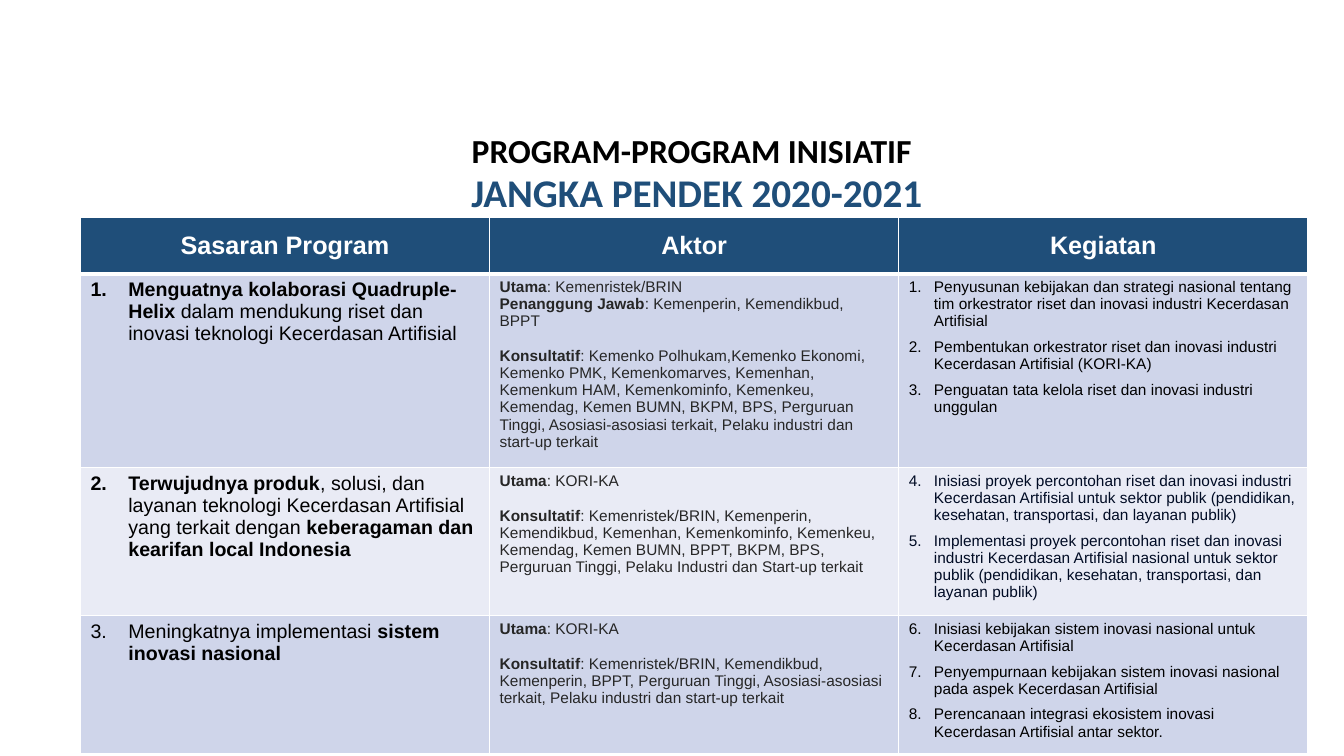
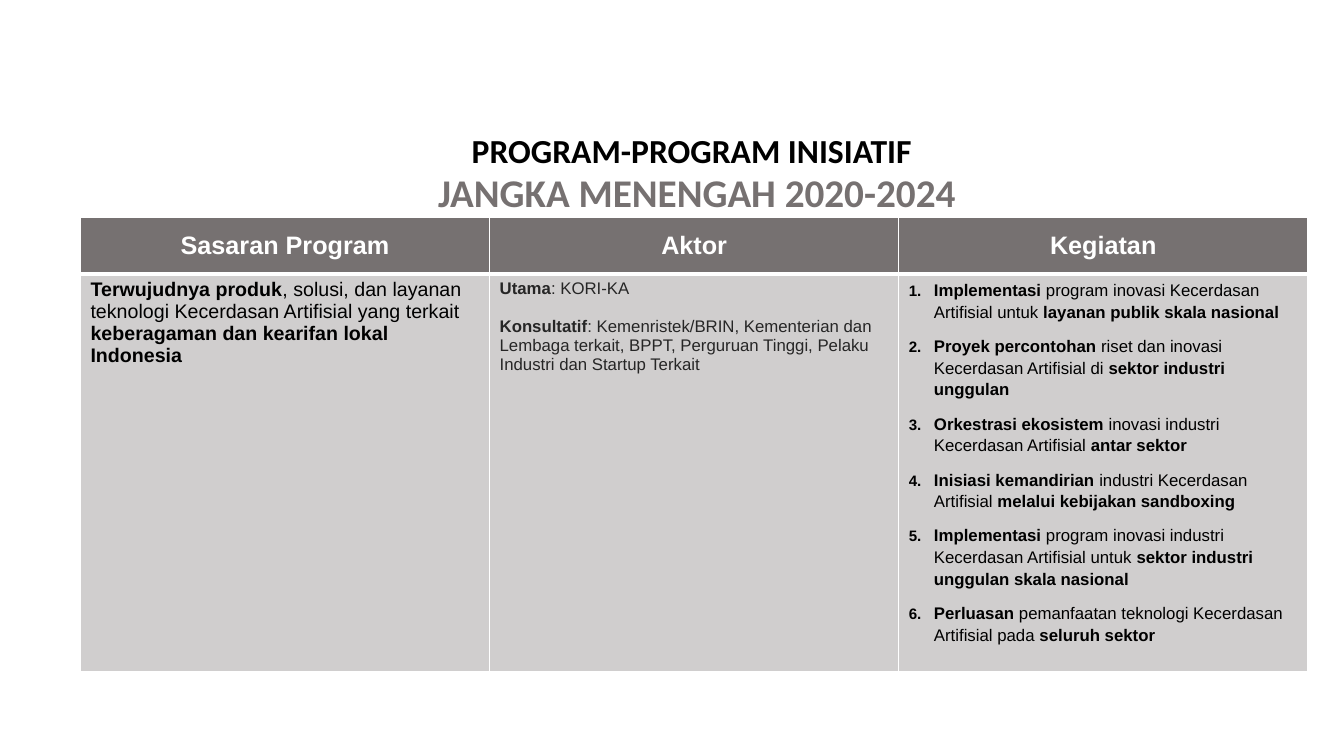
from lxml import etree
from pptx import Presentation
from pptx.dml.color import RGBColor
from pptx.enum.text import MSO_ANCHOR, PP_ALIGN
from pptx.oxml.ns import qn
from pptx.util import Pt

CENTER = PP_ALIGN.CENTER
MIDDLE = MSO_ANCHOR.MIDDLE
COLORS = {
    "black": "000000", "white": "FFFFFF", "charcoal": "262626",
    "navy": "1F4E79", "midnight": "000B24", "gray": "767171",
    "pale_blue": "CFD5EA", "ice": "E9EBF5", "pale_gray": "D0CECE",
}
TABLE_LEFT, TABLE_TOP = 57.5, 155.5
COLUMN_WIDTH, HEADER_HEIGHT = 292.25, 40
HEADINGS = ["Sasaran Program", "Aktor", "Kegiatan"]

HEADER = {"size": 18, "color": "white", "para": {"alignment": CENTER}}
GOAL = {"size": 14, "color": "black"}
NUMBERED_GOAL = {**GOAL, "indent": 27}
ACTOR = {"size": 11, "color": "charcoal", "gap": 12.4}
LARGE_ACTOR = {**ACTOR, "size": 12, "gap": 14}
ACTIVITY = {"size": 11, "color": "black", "indent": 18,
            "para": {"space_after": Pt(6)}}
DARK_ACTIVITY = {**ACTIVITY, "color": "midnight"}
LARGE_ACTIVITY = {**ACTIVITY, "size": 12, "bullet_size": 90,
                  "para": {"space_after": Pt(9), "line_spacing": 1.15}}

SHORT_TERM = [
    {"fill": "pale_blue", "height": 129, "cells": [
        (NUMBERED_GOAL, 1, [
            "**Menguatnya kolaborasi Quadruple-Helix **dalam mendukung riset dan "
            "inovasi teknologi Kecerdasan Artifisial"]),
        (ACTOR, 1, [
            "**Utama**: Kemenristek/BRIN",
            "**Penanggung Jawab**: Kemenperin, Kemendikbud, BPPT",
            "**Konsultatif**: Kemenko Polhukam,Kemenko Ekonomi, Kemenko PMK, "
            "Kemenkomarves, Kemenhan, Kemenkum HAM, Kemenkominfo, Kemenkeu, "
            "Kemendag, Kemen BUMN, BKPM, BPS, Perguruan Tinggi, Asosiasi-asosiasi "
            "terkait, Pelaku industri dan start-up terkait"]),
        (ACTIVITY, 1, [
            "Penyusunan kebijakan dan strategi nasional tentang tim orkestrator "
            "riset dan inovasi industri Kecerdasan Artifisial",
            "Pembentukan orkestrator riset dan inovasi industri Kecerdasan "
            "Artifisial (KORI-KA)",
            "Penguatan tata kelola riset dan inovasi industri unggulan"]),
    ]},
    {"fill": "ice", "height": 100, "cells": [
        (NUMBERED_GOAL, 2, [
            "**Terwujudnya produk**, solusi, dan layanan teknologi Kecerdasan "
            "Artifisial yang terkait dengan **keberagaman dan kearifan local "
            "Indonesia**"]),
        (ACTOR, 1, [
            "**Utama**: KORI-KA",
            "**Konsultatif**: Kemenristek/BRIN, Kemenperin, Kemendikbud, Kemenhan, "
            "Kemenkominfo, Kemenkeu, Kemendag, Kemen BUMN, BPPT, BKPM, BPS, "
            "Perguruan Tinggi, Pelaku Industri dan Start-up terkait"]),
        (DARK_ACTIVITY, 4, [
            "Inisiasi proyek percontohan riset dan inovasi industri Kecerdasan "
            "Artifisial untuk sektor publik (pendidikan, kesehatan, transportasi, "
            "dan layanan publik)",
            "Implementasi proyek percontohan riset dan inovasi industri Kecerdasan "
            "Artifisial nasional untuk sektor publik (pendidikan, kesehatan, "
            "transportasi, dan layanan publik)"]),
    ]},
    {"fill": "pale_blue", "height": 91, "cells": [
        (NUMBERED_GOAL, 3, [
            "Meningkatnya implementasi **sistem inovasi nasional**"]),
        (ACTOR, 1, [
            "**Utama**: KORI-KA",
            "**Konsultatif**: Kemenristek/BRIN, Kemendikbud, Kemenperin, BPPT, "
            "Perguruan Tinggi, Asosiasi-asosiasi terkait, Pelaku industri dan "
            "start-up terkait"]),
        (ACTIVITY, 6, [
            "Inisiasi kebijakan sistem inovasi nasional untuk Kecerdasan Artifisial",
            "Penyempurnaan kebijakan sistem inovasi nasional pada aspek Kecerdasan "
            "Artifisial",
            "Perencanaan integrasi ekosistem inovasi Kecerdasan Artifisial antar "
            "sektor."]),
    ]},
]

MEDIUM_TERM = [
    {"fill": "pale_gray", "height": 268.5, "cells": [
        (GOAL, 1, [
            "**Terwujudnya produk**, solusi, dan layanan teknologi Kecerdasan "
            "Artifisial yang terkait **keberagaman dan kearifan lokal Indonesia**"]),
        (LARGE_ACTOR, 1, [
            "**Utama**: KORI-KA",
            "**Konsultatif**: Kemenristek/BRIN, Kementerian dan Lembaga terkait, "
            "BPPT, Perguruan Tinggi, Pelaku Industri dan Startup Terkait"]),
        (LARGE_ACTIVITY, 1, [
            "**Implementasi** program inovasi Kecerdasan Artifisial untuk **layanan "
            "publik skala nasional**",
            "**Proyek percontohan **riset dan inovasi Kecerdasan Artifisial di "
            "**sektor industri unggulan**",
            "**Orkestrasi ekosistem **inovasi industri Kecerdasan Artifisial "
            "**antar sektor**",
            "**Inisiasi kemandirian **industri Kecerdasan Artifisial **melalui "
            "kebijakan sandboxing**",
            "**Implementasi** program inovasi industri Kecerdasan Artifisial untuk "
            "**sektor industri unggulan skala nasional**",
            "**Perluasan **pemanfaatan teknologi Kecerdasan Artifisial pada "
            "**seluruh sektor**"]),
    ]},
]


def rgb(color):
    return RGBColor.from_string(COLORS[color])


def set_values(target, values):
    for name, value in values.items():
        setattr(target, name, value)


def add_span(para, text, size, color, bold=True, font="Arial"):
    span = para.add_run()
    span.text = text
    set_values(span.font, {"name": font, "size": Pt(size), "bold": bold})
    span.font.color.rgb = rgb(color)


def add_number(para, style, start):
    properties = para._p.get_or_add_pPr()
    properties.set("marL", str(Pt(style["indent"])))
    properties.set("indent", str(-Pt(style["indent"])))
    bullet_color = etree.SubElement(properties, qn("a:buClr"))
    etree.SubElement(bullet_color, qn("a:srgbClr"), val=COLORS[style["color"]])
    if "bullet_size" in style:
        etree.SubElement(properties, qn("a:buSzPct"),
                         val=str(style["bullet_size"] * 1000))
    etree.SubElement(properties, qn("a:buFont"), typeface="Arial")
    etree.SubElement(properties, qn("a:buAutoNum"), type="arabicPeriod",
                     startAt=str(start))


def fill_cell(cell, style, start, texts):
    frame = cell.text_frame
    for index, text in enumerate(texts):
        para = frame.add_paragraph() if index else frame.paragraphs[0]
        if "indent" in style:
            add_number(para, style, start)
        set_values(para, style.get("para", {}))
        if "gap" in style and text.startswith("**Konsultatif"):
            para.space_before = Pt(style["gap"])
        for part, words in enumerate(text.split("**")):
            if words:
                add_span(para, words, style["size"], style["color"], part % 2 == 1)


def paint_cell(cell, color, bottom=1):
    properties = cell._tc.get_or_add_tcPr()
    for side, width in {"L": 1, "R": 1, "T": 1, "B": bottom}.items():
        line = etree.SubElement(properties, qn(f"a:ln{side}"), w=str(Pt(width)))
        line_fill = etree.SubElement(line, qn("a:solidFill"))
        etree.SubElement(line_fill, qn("a:srgbClr"), val=COLORS["white"])
    cell.fill.solid()
    cell.fill.fore_color.rgb = rgb(color)


def add_title(page, period, accent):
    box = page.shapes.add_textbox(Pt(138), Pt(91.5), Pt(719.5), Pt(60))
    set_values(box.text_frame, {"word_wrap": True, "vertical_anchor": MIDDLE})
    para = box.text_frame.paragraphs[0]
    set_values(para, {"alignment": CENTER, "line_spacing": 0.9})
    add_span(para, "PROGRAM-PROGRAM INISIATIF", 24, "black", font="Calibri")
    add_span(para, " ", 32, "black", font="Calibri")
    para.add_line_break()
    add_span(para, period, 28, accent, font="Calibri")


def add_program_table(page, accent, rows):
    heights = [HEADER_HEIGHT] + [row["height"] for row in rows]
    table = page.shapes.add_table(
        len(heights), len(HEADINGS), Pt(TABLE_LEFT), Pt(TABLE_TOP),
        Pt(COLUMN_WIDTH * len(HEADINGS)), Pt(sum(heights))).table
    table.horz_banding = False
    for column in table.columns:
        column.width = Pt(COLUMN_WIDTH)
    for table_row, height in zip(table.rows, heights):
        table_row.height = Pt(height)
    for column, heading in enumerate(HEADINGS):
        cell = table.cell(0, column)
        cell.vertical_anchor = MIDDLE
        paint_cell(cell, accent, bottom=3)
        fill_cell(cell, HEADER, 1, [f"**{heading}**"])
    for index, row in enumerate(rows, 1):
        for column, (style, start, texts) in enumerate(row["cells"]):
            cell = table.cell(index, column)
            paint_cell(cell, row["fill"])
            fill_cell(cell, style, start, texts)


def add_program_page(deck, period, accent, rows):
    page = deck.slides.add_slide(deck.slide_layouts[6])
    add_title(page, period, accent)
    add_program_table(page, accent, rows)


def main():
    deck = Presentation()
    set_values(deck, {"slide_width": Pt(960), "slide_height": Pt(540)})
    add_program_page(deck, "JANGKA PENDEK 2020-2021", "navy", SHORT_TERM)
    add_program_page(deck, "JANGKA MENENGAH 2020-2024", "gray", MEDIUM_TERM)
    deck.save("out.pptx")


if __name__ == "__main__":
    main()
